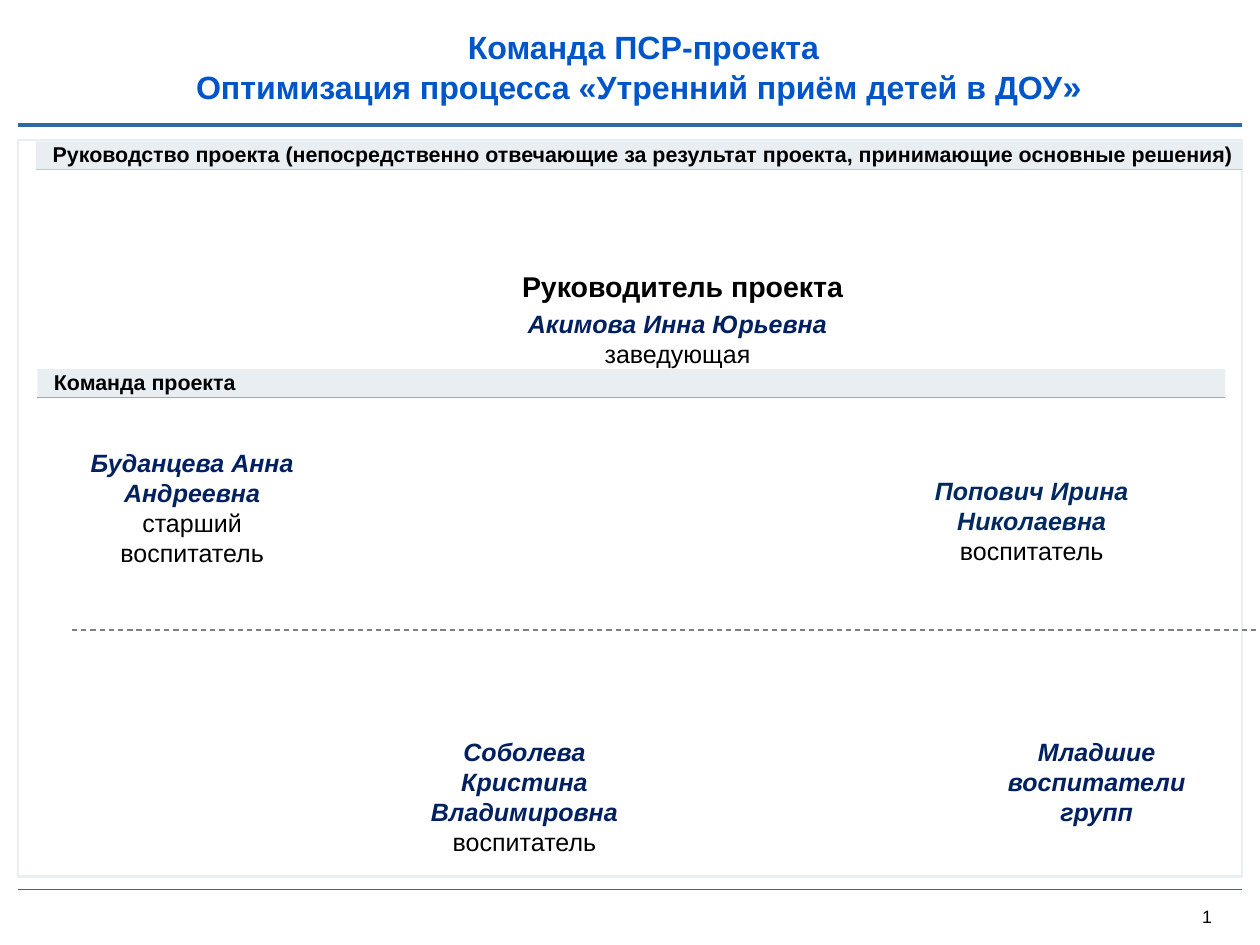
from lxml import etree
from pptx import Presentation
from pptx import util as u
from pptx.dml.color import RGBColor
from pptx.enum import dml, shapes, text
from pptx.oxml.ns import qn

# Grid: 98 columns by 73.5 rows of square cells
CELL = u.Inches(0.1)
COLS, ROWS = 98, 73.5
LEFT, RIGHT = 1.4, 96.6

COLORS = {
    "title": "0055C8",
    "rule": "2E69A5",
    "band": "E9EEF3",
    "line": "808080",
    "name": "002060",
    "name_alt": "002960",
    "text": "000000",
}

# Run formats
TITLE = {"size": 18, "bold": True, "color": "title"}
TITLE_END = {**TITLE, "size": 19}
BAND = {"size": 12, "bold": True, "color": "text"}
ROLE = {"size": 16, "bold": True, "color": "text"}
NAME = {"size": 14, "bold": True, "italic": True, "color": "name"}
NAME_ALT = {**NAME, "color": "name_alt"}
POST = {"size": 14, "bold": False, "italic": False, "color": "text"}
NUMBER = {"size": 10, "color": "text"}

TOP, MIDDLE, BOTTOM = (text.MSO_ANCHOR.TOP, text.MSO_ANCHOR.MIDDLE,
                       text.MSO_ANCHOR.BOTTOM)
CENTER, START = text.PP_ALIGN.CENTER, text.PP_ALIGN.LEFT


def cells(*values):
    return [round(v * CELL) for v in values]


def rgb(key):
    return RGBColor.from_string(COLORS[key])


def set_font(font, fmt):
    font.name = "Arial"
    for attr, value in fmt.items():
        if attr == "color":
            font.color.rgb = rgb(value)
        else:
            setattr(font, attr, u.Pt(value) if attr == "size" else value)


def fill_text(sp, paragraphs, align=CENTER, anchor=TOP, insets=(0, 0, 0, 0)):
    """Each paragraph is a list of (wording, format) runs."""
    tf = sp.text_frame
    tf.word_wrap = True
    tf.vertical_anchor = anchor
    sides = ("margin_left", "margin_top", "margin_right", "margin_bottom")
    for side, value in zip(sides, cells(*insets)):
        setattr(tf, side, value)
    for i, runs in enumerate(paragraphs):
        p = tf.add_paragraph() if i else tf.paragraphs[0]
        p.alignment = align
        for wording, fmt in runs:
            r = p.add_run()
            r.text = wording
            set_font(r.font, fmt)


def add_text(s, box, paragraphs, **options):
    sp = s.shapes.add_textbox(*cells(*box))
    fill_text(sp, paragraphs, **options)
    return sp


def add_person(s, box, name, post=None, fmt=NAME, **options):
    paragraphs = [[(name, fmt)]]
    if post:
        paragraphs.append([(post, POST)])
    add_text(s, box, paragraphs, **options)


def add_line(s, x1, x2, y, color="line", width=0.75, dashed=False):
    ln = s.shapes.add_connector(shapes.MSO_CONNECTOR.STRAIGHT,
                                *cells(x1, y, x2, y))
    ln.line.color.rgb = rgb(color)
    ln.line.width = u.Pt(width)
    if dashed:
        ln.line.dash_style = dml.MSO_LINE.DASH
    etree.SubElement(ln._element.spPr, qn("a:effectLst"))


def add_rect(s, *box):
    sp = s.shapes.add_shape(shapes.MSO_SHAPE.RECTANGLE, *cells(*box))
    sp.shadow.inherit = False
    return sp


def add_frame(s):
    sp = add_rect(s, LEFT, 10.9, RIGHT - LEFT, 57.3)
    sp.fill.background()
    sp.line.color.rgb = rgb("band")
    sp.line.width = u.Pt(1.5)


def add_band(s, x, y, width, wording):
    height = 2.2
    add_line(s, x, x + width, y + height)
    sp = add_rect(s, x, y, width, height)
    sp.fill.solid()
    sp.fill.fore_color.rgb = rgb("band")
    sp.line.fill.background()
    fill_text(sp, [[(wording, BAND)]], align=START, anchor=BOTTOM,
              insets=(1.3, 0, 0, 0.2))


def add_slide_number(s):
    sp = add_text(s, (93.5, 70.4, 2.3, 1.7), [[("1", NUMBER)]],
                  align=START, anchor=MIDDLE)
    run = sp.text_frame.paragraphs[0].runs[0]._r
    run.tag = qn("a:fld")
    run.set("id", "{B6F15528-21DE-4FAA-801E-634DDDAF4B2B}")
    run.set("type", "slidenum")


def main():
    prs = Presentation()
    prs.slide_width, prs.slide_height = cells(COLS, ROWS)
    s = prs.slides.add_slide(prs.slide_layouts[6])

    # Title, rules and page number
    add_line(s, LEFT, RIGHT, 69.2, "rule")
    add_line(s, LEFT, RIGHT, 9.7, "rule", 2.25)
    add_slide_number(s)
    add_text(s, (13.5, 2, 73.1, 6.4), [
        [("Команда ПСР-проекта", TITLE)],
        [("Оптимизация процесса «Утренний приём детей в ДОУ", TITLE),
         ("» ", TITLE_END)],
    ], anchor=MIDDLE)
    add_frame(s)

    # Project lead
    add_band(s, 2.8, 11, 93.8,
             "Руководство проекта (непосредственно отвечающие за результат "
             "проекта, принимающие основные решения)")
    add_text(s, (18.6, 20.9, 69, 2.7), [[("Руководитель проекта", ROLE)]])
    add_person(s, (18.9, 23.5, 67.6, 5.7), "Акимова Инна Юрьевна",
               "заведующая", insets=(1, 0.5, 1, 0.5))

    # Project team
    add_band(s, 2.9, 28.7, 92.4, "Команда проекта")
    add_person(s, (5.6, 34.8, 18.7, 8.5), "Буданцева Анна Андреевна",
               "старший воспитатель")
    add_person(s, (70.9, 32.2, 18.7, 16.5), "Попович Ирина Николаевна",
               "воспитатель", NAME_ALT, anchor=MIDDLE,
               insets=(1, 0.5, 1, 0.5))
    add_line(s, 5.6, COLS, 49, dashed=True)
    add_person(s, (32.8, 57.3, 16, 6.8), "Соболева Кристина Владимировна",
               "воспитатель")
    add_person(s, (75.3, 57.3, 20, 6.1), "Младшие воспитатели групп")

    prs.save("out.pptx")


if __name__ == "__main__":
    main()
